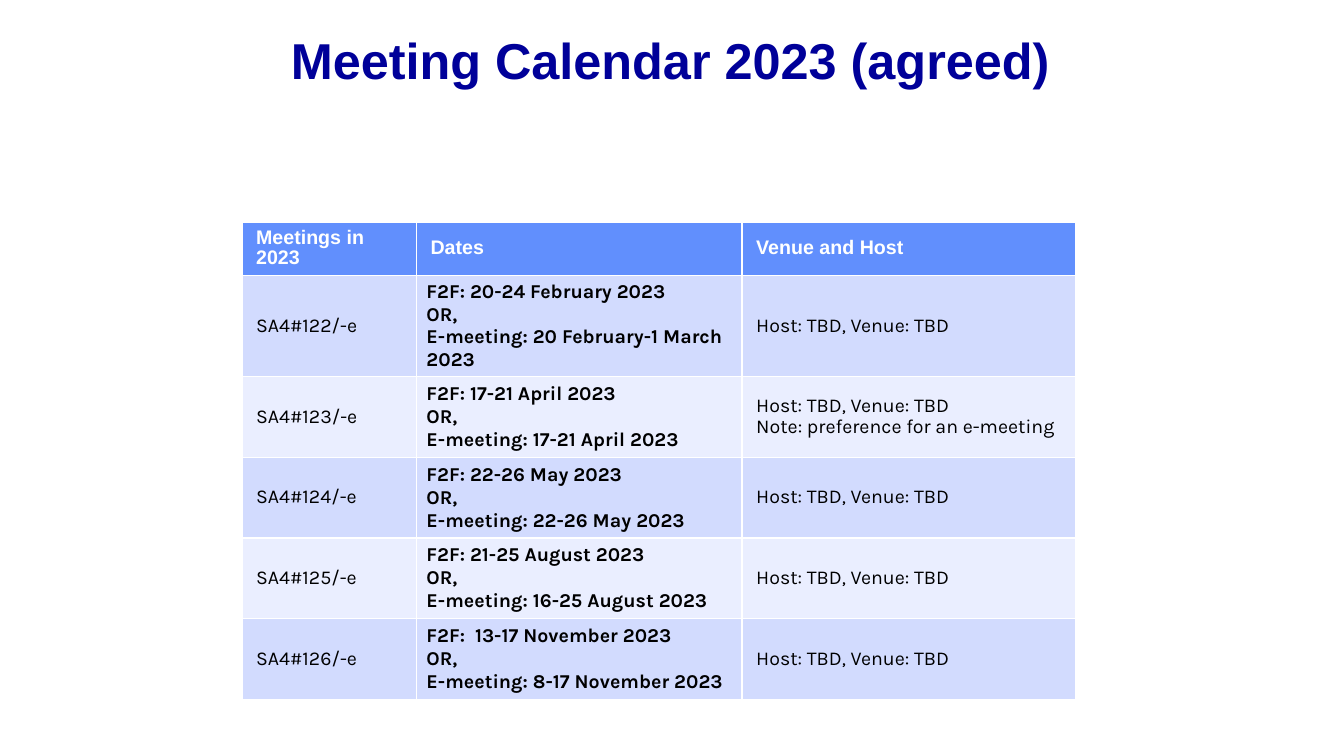
from pptx import Presentation
from pptx.dml.color import RGBColor
from pptx.enum.text import MSO_ANCHOR, MSO_AUTO_SIZE, PP_ALIGN
from pptx.util import Inches, Pt

TITLE = "Meeting Calendar 2023 (agreed)"
HEADERS = ["Meetings in 2023", "Dates", "Venue and Host"]
HOST = "Host: TBD, Venue: TBD"
# Meeting, face-to-face dates, e-meeting dates, venue lines
MEETINGS = [
    ("SA4#122/-e", "20-24 February 2023", "20 February-1 March 2023", [HOST]),
    ("SA4#123/-e", "17-21 April 2023", "17-21 April 2023",
     [HOST, "Note: preference for an e-meeting"]),
    ("SA4#124/-e", "22-26 May 2023", "22-26 May 2023", [HOST]),
    ("SA4#125/-e", "21-25 August 2023", "16-25 August 2023", [HOST]),
    ("SA4#126/-e", " 13-17 November 2023", "8-17 November 2023", [HOST]),
]
COLUMN_WIDTHS = [1.73, 3.23, 3.31]
HEADER_HEIGHT, ROW_HEIGHT = 0.52, 0.8
TABLE_LEFT, TABLE_TOP = 2.4, 2.21
HEADER_FILL, BAND_FILLS = "618FFD", ["D2DBFE", "EAEEFF"]


def color(value):
    return RGBColor.from_string(value)


def set_font(paragraph, name, size, value, bold):
    font = paragraph.font
    font.name, font.size, font.bold = name, Pt(size), bold
    font.color.rgb = color(value)


def fill_cell(cell, lines, fill, name, text_color, bold, inset=True):
    """Write one paragraph per line; inset gives tight, slightly indented lines."""
    cell.fill.solid()
    cell.fill.fore_color.rgb = color(fill)
    cell.vertical_anchor = MSO_ANCHOR.MIDDLE
    cell.text_frame.text = "\n".join(lines)
    for paragraph in cell.text_frame.paragraphs:
        set_font(paragraph, name, 14, text_color, bold)
        if inset:
            paragraph.line_spacing = 0.9
            properties = paragraph._p.get_or_add_pPr()
            properties.set("marL", str(Inches(0.04)))
            properties.set("indent", "0")


def add_title(slide):
    title = slide.shapes.title
    title.left, title.top = Inches(0.62), Inches(0.25)
    title.width, title.height = Inches(12.06), Inches(0.75)
    frame = title.text_frame
    frame.text = TITLE
    frame.auto_size = MSO_AUTO_SIZE.NONE
    frame.vertical_anchor = MSO_ANCHOR.MIDDLE
    paragraph = frame.paragraphs[0]
    paragraph.alignment = PP_ALIGN.CENTER
    paragraph.line_spacing = 0.9
    set_font(paragraph, "Arial", 36, "000099", True)


def add_calendar(slide):
    height = HEADER_HEIGHT + ROW_HEIGHT * len(MEETINGS)
    table = slide.shapes.add_table(
        len(MEETINGS) + 1, len(HEADERS), Inches(TABLE_LEFT), Inches(TABLE_TOP),
        Inches(sum(COLUMN_WIDTHS)), Inches(height)).table
    for column, width in zip(table.columns, COLUMN_WIDTHS):
        column.width = Inches(width)
    for row in table.rows:
        row.height = Inches(ROW_HEIGHT)
    table.rows[0].height = Inches(HEADER_HEIGHT)

    for column, header in enumerate(HEADERS):
        fill_cell(table.cell(0, column), [header], HEADER_FILL, "Arial", "FFFFFF", True)
    for index, (meeting, in_person, online, venue) in enumerate(MEETINGS):
        fill = BAND_FILLS[index % 2]
        dates = [f"F2F: {in_person}", "OR,", f"E-meeting: {online}"]
        for column, lines in enumerate([[meeting], dates, venue]):
            is_dates = column == 1
            fill_cell(table.cell(index + 1, column), lines, fill, "Karla", "000000",
                      bold=is_dates, inset=not is_dates)


def main():
    presentation = Presentation()
    presentation.slide_width, presentation.slide_height = Inches(13.33), Inches(7.5)
    slide = presentation.slides.add_slide(presentation.slide_layouts[5])
    add_title(slide)
    add_calendar(slide)
    presentation.save("out.pptx")


if __name__ == "__main__":
    main()
